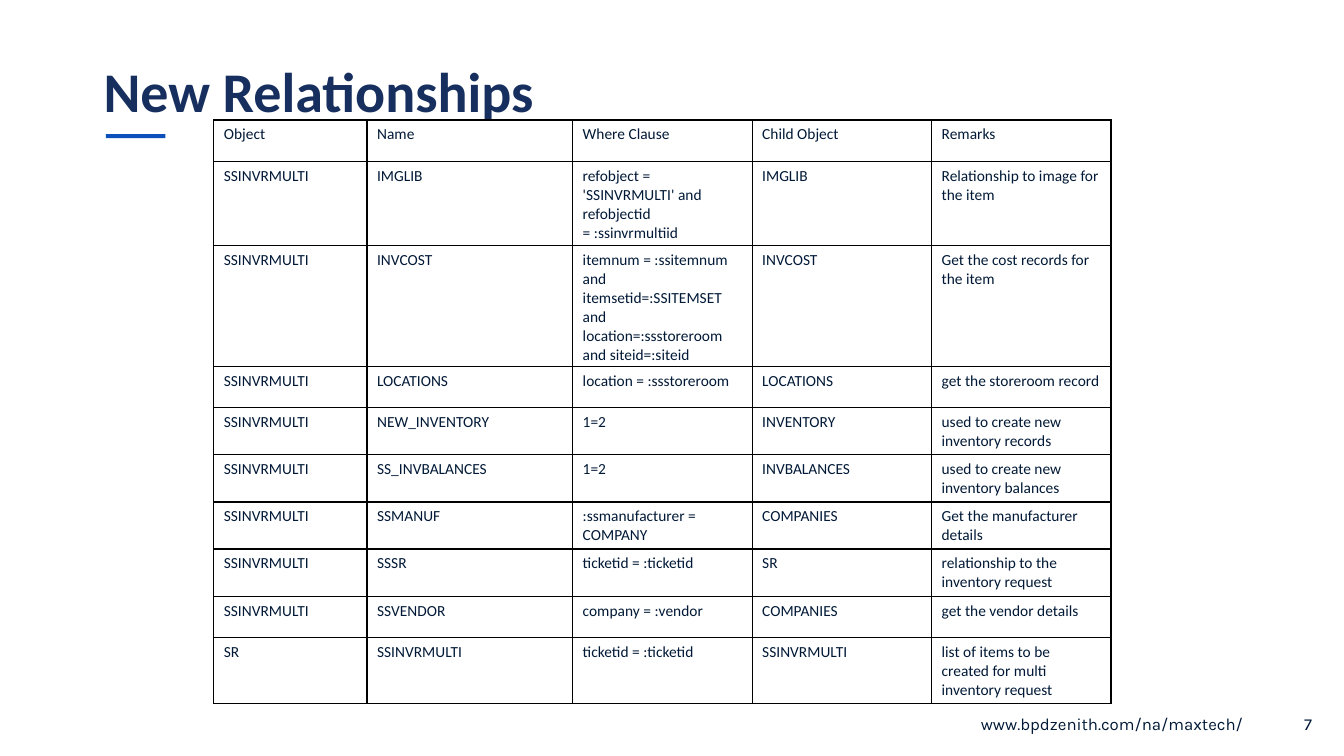
import dataclasses
import typing

import lxml.etree
import pptx
import pptx.dml.color
import pptx.enum.shapes
import pptx.enum.text
import pptx.oxml.ns
import pptx.util

Inches = pptx.util.Inches
ALIGN = pptx.enum.text.PP_ALIGN
ANCHOR = pptx.enum.text.MSO_ANCHOR

COLORS = {"ink": "011936", "title": "172F5E", "accent": "0D50BC", "grid": "000000"}
COLUMN_WIDTHS = (1.52, 2.04, 1.78, 1.78, 1.78)
ROW_HEIGHT = 0.41


class Relationship(typing.NamedTuple):
    source: str
    name: str
    where: str
    child: str
    remarks: str


@dataclasses.dataclass
class Label:
    text: str
    left: float
    top: float
    width: float
    height: float
    style: dict[str, typing.Any]


FOOTER = {"size": 12, "font": "Karla", "align": ALIGN.RIGHT}
LABELS = (
    Label("www.bpdzenith.com/na/maxtech/", 9.3, 7.03, 3.13, 0.3, FOOTER),
    Label("7", 12.37, 7.03, 0.74, 0.3, FOOTER),
    Label("New Relationships", 0.93, 0.41, 11.5, 1.06,
          {"size": 40, "color": "title", "bold": True, "spacing": 0.9,
           "anchor": ANCHOR.MIDDLE}),
)

HEADER = Relationship("Object", "Name", "Where Clause", "Child Object", "Remarks")
MULTI = "SSINVRMULTI"
RELATIONSHIPS = (
    Relationship(MULTI, "IMGLIB",
                 "refobject = 'SSINVRMULTI' and refobjectid = :ssinvrmultiid",
                 "IMGLIB", "Relationship to image for the item"),
    Relationship(MULTI, "INVCOST",
                 "itemnum = :ssitemnum and itemsetid=:SSITEMSET and "
                 "location=:ssstoreroom and siteid=:siteid",
                 "INVCOST", "Get the cost records for the item"),
    Relationship(MULTI, "LOCATIONS", "location = :ssstoreroom",
                 "LOCATIONS", "get the storeroom record"),
    Relationship(MULTI, "NEW_INVENTORY", "1=2",
                 "INVENTORY", "used to create new inventory records"),
    Relationship(MULTI, "SS_INVBALANCES", "1=2",
                 "INVBALANCES", "used to create new inventory balances"),
    Relationship(MULTI, "SSMANUF", ":ssmanufacturer = COMPANY",
                 "COMPANIES", "Get the manufacturer details"),
    Relationship(MULTI, "SSSR", "ticketid = :ticketid",
                 "SR", "relationship to the inventory request"),
    Relationship(MULTI, "SSVENDOR", "company = :vendor",
                 "COMPANIES", "get the vendor details"),
    Relationship("SR", MULTI, "ticketid = :ticketid",
                 MULTI, "list of items to be created for multi inventory request"),
)


def rgb(name: str) -> pptx.dml.color.RGBColor:
    return pptx.dml.color.RGBColor.from_string(COLORS[name])


def write(frame, text: str, *, size: float = 11, font: str = "Calibri",
          color: str = "ink", bold: bool = False, align=ALIGN.LEFT,
          anchor=ANCHOR.TOP, spacing: float = 1.0) -> None:
    frame.word_wrap = True
    frame.vertical_anchor = anchor
    para = frame.paragraphs[0]
    para.alignment = align
    para.line_spacing = spacing
    span = para.add_run()
    span.text = text
    span.font.name = font
    span.font.size = pptx.util.Pt(size)
    span.font.bold = bold
    span.font.color.rgb = rgb(color)


def add_label(page, label: Label) -> None:
    box = page.shapes.add_textbox(Inches(label.left), Inches(label.top),
                                  Inches(label.width), Inches(label.height))
    write(box.text_frame, label.text, **label.style)


def add_accent(page) -> None:
    """Draw the short bar under the title."""
    bar = page.shapes.add_shape(pptx.enum.shapes.MSO_SHAPE.RECTANGLE, Inches(1.05),
                                Inches(1.33), Inches(0.59), Inches(0.04))
    bar.shadow.inherit = False
    bar.fill.solid()
    bar.fill.fore_color.rgb = rgb("accent")
    bar.line.fill.background()


def add_borders(cell) -> None:
    qualified = pptx.oxml.ns.qn
    properties = cell._tc.get_or_add_tcPr()
    for index, side in enumerate(("lnL", "lnR", "lnT", "lnB")):
        line = lxml.etree.Element(qualified(f"a:{side}"), w=str(pptx.util.Pt(1)))
        fill = lxml.etree.SubElement(line, qualified("a:solidFill"))
        lxml.etree.SubElement(fill, qualified("a:srgbClr"), val=COLORS["grid"])
        properties.insert(index, line)


def add_relationship_table(page) -> None:
    rows = (HEADER, *RELATIONSHIPS)
    table = page.shapes.add_table(
        len(rows), len(COLUMN_WIDTHS), Inches(2.12), Inches(1.19),
        Inches(sum(COLUMN_WIDTHS)), Inches(ROW_HEIGHT * len(rows))).table
    table.first_row = False
    table.horz_banding = False
    for column, width in zip(table.columns, COLUMN_WIDTHS):
        column.width = Inches(width)
    for row, relationship in zip(table.rows, rows):
        row.height = Inches(ROW_HEIGHT)
        for cell, text in zip(row.cells, relationship):
            cell.fill.background()
            add_borders(cell)
            write(cell.text_frame, text)


def main() -> None:
    deck = pptx.Presentation()
    deck.slide_width = Inches(13.33)
    deck.slide_height = Inches(7.5)
    page = deck.slides.add_slide(deck.slide_layouts[6])
    add_accent(page)
    for label in LABELS:
        add_label(page, label)
    add_relationship_table(page)
    deck.save("out.pptx")


if __name__ == "__main__":
    main()
